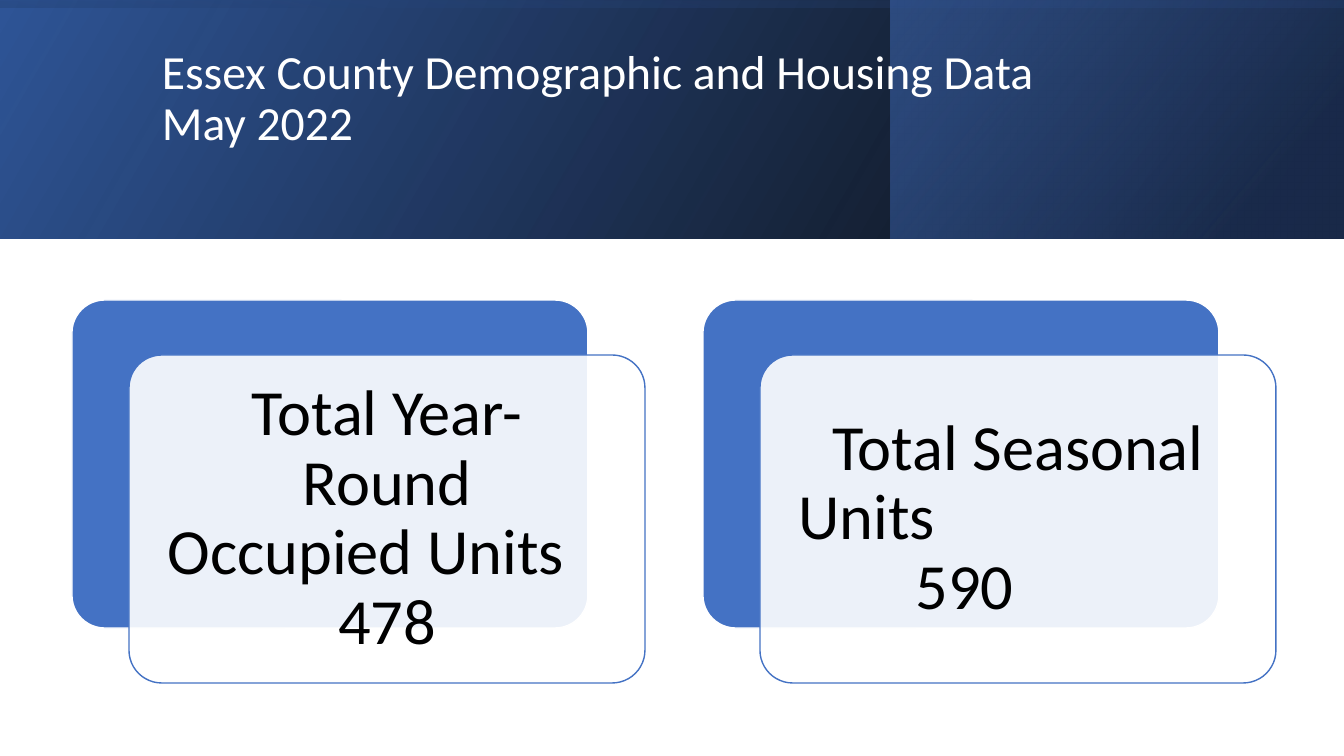
from lxml import etree
from pptx import Presentation, util as u
from pptx.dml.color import RGBColor
from pptx.enum import shapes, text
from pptx.oxml import parse_xml
from pptx.oxml.ns import nsdecls, qn

COLORS = {"blue": "4472C4", "deep": "2F5597", "navy": "203864",
          "black": "000000", "white": "FFFFFF"}
FONT = "Calibri"
TITLE = ["Essex County Demographic and Housing Data", "May 2022"]

# Banner layers: (left, top, width, height), rotation,
# gradient angle, [(position %, colour, opacity %)]
BANNER = [
    ((0, 0, 1344, 239), 0, 330, [(0, "black", 96), (100, "deep", 100)]),
    ((891, 0, 452, 239), 0, 320, [(19, "navy", 68), (100, "blue", 48)]),
    ((552, -552, 239, 1344), 270, 350, [(23, "deep", 16), (99, "black", 45)]),
]

# Card lines: (words, alignment, indent)
CENTER, LEFT = text.PP_ALIGN.CENTER, text.PP_ALIGN.LEFT
CARDS = [
    [("Total Year-Round", CENTER, 0), ("Occupied Units", LEFT, 0),
     ("478", CENTER, 0)],
    [("Total Seasonal", CENTER, 0), ("Units", LEFT, 0), ("590", LEFT, 117)],
]
CARD_LEFT, CARD_TOP, CARD_PITCH = 72, 300, 631
CARD_WIDTH, CARD_HEIGHT = 516, 328
FRONT_SHIFT = (57, 55)
CARD_INSET = 29


def px(length):
    return u.Emu(round(length * 914400 / 100.8))


def rgb(name):
    return RGBColor.from_string(COLORS[name])


def add_block(page, kind, place):
    block = page.shapes.add_shape(kind, *map(px, place))
    block.shadow.inherit = False
    return block


def add_banner_layer(page, place, rotation, angle, stops):
    layer = add_block(page, shapes.MSO_SHAPE.RECTANGLE, place)
    layer.rotation = rotation
    layer.line.fill.background()
    props = layer._element.spPr
    props.find(qn("a:xfrm")).set("flipH", "1")
    stops_xml = "".join(
        f'<a:gs pos="{at * 1000}"><a:srgbClr val="{COLORS[color]}">'
        f'<a:alpha val="{opacity * 1000}"/></a:srgbClr></a:gs>'
        for at, color, opacity in stops)
    props.find(qn("a:prstGeom")).addnext(parse_xml(
        f'<a:gradFill {nsdecls("a")} rotWithShape="1">'
        f'<a:gsLst>{stops_xml}</a:gsLst>'
        f'<a:lin ang="{angle * 60000}" scaled="0"/></a:gradFill>'))


def add_span(para, words, size, color):
    span = para.add_run()
    span.text = words
    span.font.name = FONT
    span.font.size = u.Pt(size)
    span.font.color.rgb = rgb(color)


def add_title(page):
    box = page.shapes.add_textbox(px(152), px(38), px(1072), px(173))
    frame = box.text_frame
    frame.word_wrap = True
    frame.margin_top = px(10)
    para = frame.paragraphs[0]
    para.line_spacing = 0.9
    for number, words in enumerate(TITLE):
        if number:
            para.add_line_break()
        add_span(para, words, 34, "white")


def add_panel(page, left, top, fill, line):
    panel = add_block(page, shapes.MSO_SHAPE.ROUNDED_RECTANGLE,
                      (left, top, CARD_WIDTH, CARD_HEIGHT))
    panel.adjustments[0] = 0.1
    panel.fill.solid()
    panel.fill.fore_color.rgb = rgb(fill)
    panel.line.color.rgb = rgb(line)
    panel.line.width = u.Pt(1)
    return panel


def add_card(page, left, lines):
    add_panel(page, left, CARD_TOP, "blue", "white")
    front = add_panel(page, left + FRONT_SHIFT[0], CARD_TOP + FRONT_SHIFT[1],
                      "white", "blue")
    color = front._element.spPr.find(qn("a:solidFill")).find(qn("a:srgbClr"))
    etree.SubElement(color, qn("a:alpha")).set("val", "90000")

    frame = front.text_frame
    frame.word_wrap = True
    frame.vertical_anchor = text.MSO_ANCHOR.MIDDLE
    frame.margin_left = frame.margin_right = px(CARD_INSET)
    frame.margin_top = frame.margin_bottom = px(CARD_INSET)
    for number, (words, alignment, indent) in enumerate(lines):
        para = frame.add_paragraph() if number else frame.paragraphs[0]
        para.alignment = alignment
        para.line_spacing = 0.9
        if indent:
            para._p.get_or_add_pPr().set("marL", str(px(indent)))
        add_span(para, words, 46, "black")


def main():
    deck = Presentation()
    deck.slide_width, deck.slide_height = px(1344), px(756)
    page = deck.slides.add_slide(deck.slide_layouts[6])
    for layer in BANNER:
        add_banner_layer(page, *layer)
    add_title(page)
    for column, lines in enumerate(CARDS):
        add_card(page, CARD_LEFT + column * CARD_PITCH, lines)
    deck.save("out.pptx")


if __name__ == "__main__":
    main()
